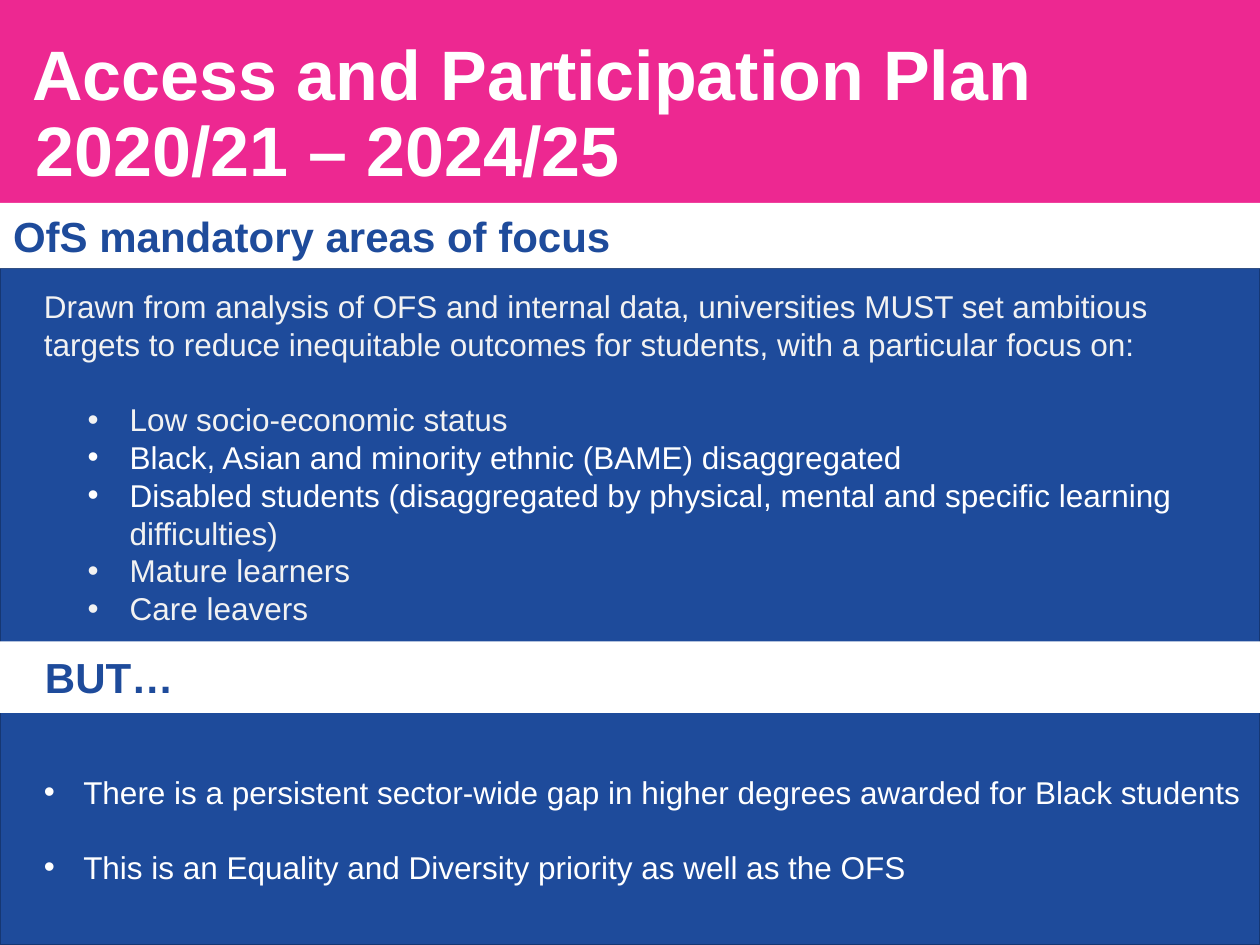
from lxml.etree import SubElement
from pptx import Presentation
from pptx.dml.color import RGBColor
from pptx.enum.shapes import MSO_SHAPE
from pptx.enum.text import MSO_ANCHOR, MSO_AUTO_SIZE, PP_ALIGN
from pptx.oxml.ns import qn
from pptx.util import Pt

PINK = RGBColor(0xED, 0x28, 0x91)
BLUE = RGBColor(0x1E, 0x4B, 0x9B)
NAVY = RGBColor(0x16, 0x37, 0x73)
WHITE = RGBColor(0xFF, 0xFF, 0xFF)
PALE = RGBColor(0xF2, 0xF2, 0xF2)
FONT = "Arial"
BODY_SIZE = 18
LINE_GAP = Pt(21.5)

INTRO = ("Drawn from analysis of OFS and internal data, universities MUST set "
         "ambitious targets to reduce inequitable outcomes for students, with "
         "a particular focus on:")
FOCUS_AREAS = [
    [("Low socio-economic status", PALE)],
    [("Black, Asian and minority ethnic (BAME) disaggregated", WHITE)],
    [("Disabled students (disaggregated by physical, mental and specific "
      "learning ", WHITE), ("difficulties)", PALE)],
    [("Mature learners", PALE)],
    [("Care leavers", PALE)],
]
ISSUES = [
    "There is a persistent sector-wide gap in higher degrees awarded for Black students",
    "This is an Equality and Diversity priority as well as the OFS",
]


def add_span(para, text, size, color, bold=False):
    span = para.add_run()
    span.text = text
    span.font.name = FONT
    span.font.size = Pt(size)
    span.font.bold = bold
    span.font.color.rgb = color


def set_indent(para, left, hanging=0, bullet=None):
    """Set the left and hanging indents, in points, and the bullet sign."""
    properties = para._p.get_or_add_pPr()
    properties.set("marL", str(Pt(left)))
    properties.set("indent", str(-Pt(hanging)))
    if bullet:
        SubElement(properties, qn("a:buFont"), typeface=FONT)
        SubElement(properties, qn("a:buChar"), char=bullet)
    else:
        SubElement(properties, qn("a:buNone"))


def add_block(page, box, fill, line=None):
    block = page.shapes.add_shape(MSO_SHAPE.RECTANGLE, *map(Pt, box))
    block.shadow.inherit = False
    block.fill.solid()
    block.fill.fore_color.rgb = fill
    if line is None:
        block.line.fill.background()
    else:
        block.line.color.rgb = line
        block.line.width = Pt(1)
    return block


def place_title(page, box, lines):
    """Fill the title; each line comes with its own left indent."""
    title = page.shapes.title
    title.left, title.top, title.width, title.height = map(Pt, box)
    frame = title.text_frame
    frame.word_wrap = True
    frame.auto_size = MSO_AUTO_SIZE.NONE
    frame.vertical_anchor = MSO_ANCHOR.TOP
    frame.margin_left = frame.margin_right = frame.margin_bottom = 0
    frame.margin_top = Pt(23)
    for index, (text, indent) in enumerate(lines):
        para = frame.add_paragraph() if index else frame.paragraphs[0]
        para.alignment = PP_ALIGN.LEFT
        para.line_spacing = 0.9
        para.space_before = Pt(0)
        set_indent(para, indent)
        add_span(para, text, 40, WHITE, bold=True)


def add_heading_band(page, box, text, margin):
    frame = add_block(page, box, WHITE).text_frame
    frame.vertical_anchor = MSO_ANCHOR.MIDDLE
    frame.margin_left = Pt(margin)
    para = frame.paragraphs[0]
    para.alignment = PP_ALIGN.LEFT
    add_span(para, text, 24, BLUE, bold=True)


def add_focus_areas(page, box):
    frame = add_block(page, box, BLUE).text_frame
    frame.word_wrap = True
    frame.vertical_anchor = MSO_ANCHOR.TOP
    intro = frame.paragraphs[0]
    intro.alignment = PP_ALIGN.LEFT
    add_span(intro, INTRO, BODY_SIZE, PALE)
    for index, spans in enumerate(FOCUS_AREAS):
        para = frame.add_paragraph()
        para.alignment = PP_ALIGN.LEFT
        para.space_before = Pt(0) if index else LINE_GAP
        set_indent(para, 49, 24, "•")
        for text, color in spans:
            add_span(para, text, BODY_SIZE, color)


def add_issues(page, box):
    frame = page.shapes.add_textbox(*map(Pt, box)).text_frame
    frame.word_wrap = True
    for index, text in enumerate(ISSUES):
        para = frame.add_paragraph() if index else frame.paragraphs[0]
        para.space_before = LINE_GAP if index else Pt(0)
        set_indent(para, 22.5, 22.5, "•")
        add_span(para, text, BODY_SIZE, WHITE)


def main():
    deck = Presentation()
    deck.slide_width, deck.slide_height = Pt(720), Pt(540)
    page = deck.slides.add_slide(deck.slide_layouts[5])
    page.background.fill.solid()
    page.background.fill.fore_color.rgb = PINK

    place_title(page, (0, 0, 720, 108.7),
                [("Access and Participation Plan", 18.5), ("2020/21 – 2024/25", 20.5)])
    add_block(page, (0, 153.4, 720, 386.6), BLUE, NAVY)
    add_focus_areas(page, (18, 160.5, 680.4, 172))
    add_heading_band(page, (0, 115.9, 720, 37.4), "OfS mandatory areas of focus", 7.5)
    add_heading_band(page, (0, 366.5, 720, 41), "BUT…", 25.7)
    add_issues(page, (18, 438, 702, 72.7))
    deck.save("out.pptx")


if __name__ == "__main__":
    main()
